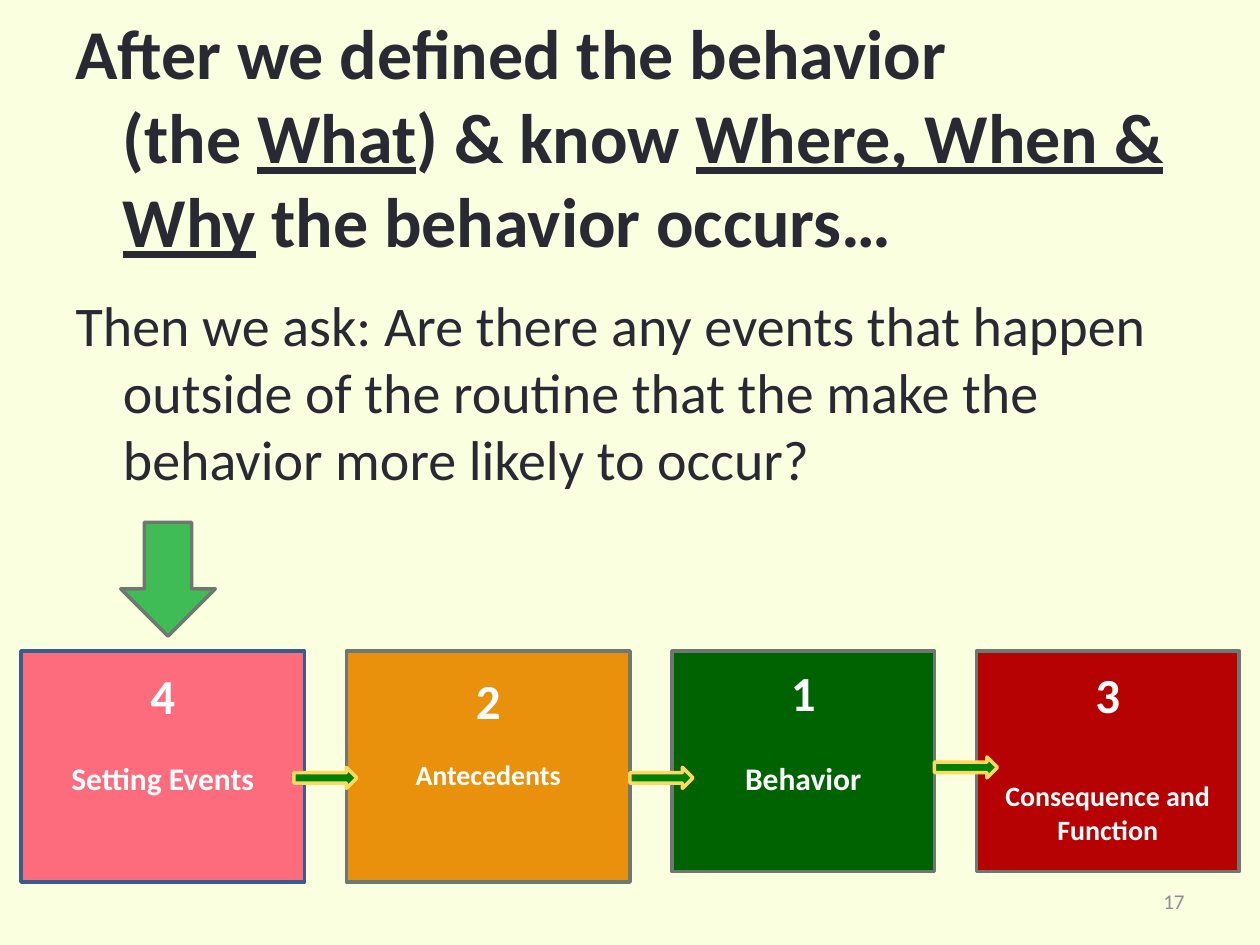
from pptx import Presentation
from pptx.dml.color import RGBColor
from pptx.enum import shapes, text
from pptx.oxml.ns import qn
from pptx.util import Pt

INK, WHITE, GREY, EDGE = "292934", "FFFFFF", "8D8D8F", "6D7871"
GAP = 24

STAGES = [
    ("4", "Setting Events", 18, "FC6C7D", "385D8A", 162, 132, 8.5, 19.5),
    ("2", "Antecedents", 16, "E9910C", EDGE, 162, 132, 11, 16.5),
    ("1", "Behavior", 18, "006301", EDGE, 150, 126, 6.5, 21.5),
    ("3", "Consequence and Function", 16, "B60202", EDGE, 150, 126, 8, 31.5),
]
STEP_ARROWS = [(156, 66.5), (162, 66.5), (150, 60.5)]


def rgb(value):
    return RGBColor.from_string(value)


def style(run, size, color, bold=False, underline=False):
    run.font.name = "Calibri"
    run.font.size = Pt(size)
    run.font.bold = bold
    run.font.underline = underline
    run.font.color.rgb = rgb(color)


def add_block(slide, kind, box, fill, line):
    block = slide.shapes.add_shape(kind, *map(Pt, box))
    block.shadow.inherit = False
    block.fill.solid()
    block.fill.fore_color.rgb = rgb(fill)
    block.line.color.rgb = rgb(line)
    block.line.width = Pt(2)
    return block


def add_question(slide, box):
    slide.shapes.title.element.getparent().remove(slide.shapes.title.element)
    body = slide.placeholders[1]
    body.left, body.top, body.width, body.height = map(Pt, box)
    frame = body.text_frame
    frame.auto_size = text.MSO_AUTO_SIZE.NONE
    frame.vertical_anchor = text.MSO_ANCHOR.TOP
    frame.margin_top = Pt(5.5)
    known, question = frame.paragraphs[0], frame.add_paragraph()
    for words, underline in [
        ("After we defined the behavior", False),
        (None, False),
        ("(the ", False),
        ("What", True),
        (") & know ", False),
        ("Where, When & Why", True),
        (" the behavior occurs…", False),
    ]:
        if words is None:
            known.add_line_break()
            continue
        run = known.add_run()
        run.text = words
        style(run, 40, INK, True, underline)
    question.text = ("Then we ask: Are there any events that happen outside of the "
                     "routine that the make the behavior more likely to occur?")
    style(question.runs[0], 32, INK)
    for paragraph, before in ((known, 0), (question, 16.5)):
        paragraph.space_before = Pt(before)
        paragraph.space_after = Pt(0)
        properties = paragraph._p.get_or_add_pPr()
        properties.set("marL", str(Pt(27)))
        properties.set("indent", str(-Pt(27)))
        properties.append(properties.makeelement(qn("a:buNone"), {}))


def add_stage(slide, box, number, label, size, fill, line, inset, spacing):
    stage = add_block(slide, shapes.MSO_SHAPE.RECTANGLE, box, fill, line)
    frame = stage.text_frame
    frame.word_wrap = True
    frame.vertical_anchor = text.MSO_ANCHOR.TOP
    frame.margin_top = Pt(inset)
    frame.text = f"{number}\n{label}"
    for paragraph, points in zip(frame.paragraphs, (28, size)):
        paragraph.alignment = text.PP_ALIGN.CENTER
        style(paragraph.runs[0], points, WHITE, True)
    frame.paragraphs[1].space_before = Pt(spacing)


def add_chain(slide, left, top):
    x, starts = left, []
    for number, label, size, fill, line, width, height, inset, spacing in STAGES:
        add_stage(slide, (x, top, width, height), number, label, size,
                  fill, line, inset, spacing)
        starts.append(x)
        x += width + GAP
    for start, (across, down) in zip(starts, STEP_ARROWS):
        add_block(slide, shapes.MSO_SHAPE.RIGHT_ARROW,
                  (start + across, top + down, 36, 12), "008000", "FFD95E")
    add_block(slide, shapes.MSO_SHAPE.DOWN_ARROW,
              (left + 57, top - 73.5, 54, 65), "40BC56", EDGE)


def add_page_number(slide, box, number):
    frame = slide.shapes.add_textbox(*map(Pt, box)).text_frame
    frame.word_wrap = True
    frame.vertical_anchor = text.MSO_ANCHOR.MIDDLE
    frame.text = number
    frame.paragraphs[0].alignment = text.PP_ALIGN.RIGHT
    style(frame.paragraphs[0].runs[0], 12, GREY)


def main():
    deck = Presentation()
    deck.slide_width, deck.slide_height = Pt(720), Pt(540)
    slide = deck.slides.add_slide(deck.slide_layouts[1])
    slide.background.fill.solid()
    slide.background.fill.fore_color.rgb = rgb("FAFFE0")
    add_question(slide, (36, 0, 648, 502))
    add_chain(slide, 12, 372)
    add_page_number(slide, (516, 500.5, 168, 29), "17")
    deck.save("out.pptx")


if __name__ == "__main__":
    main()
